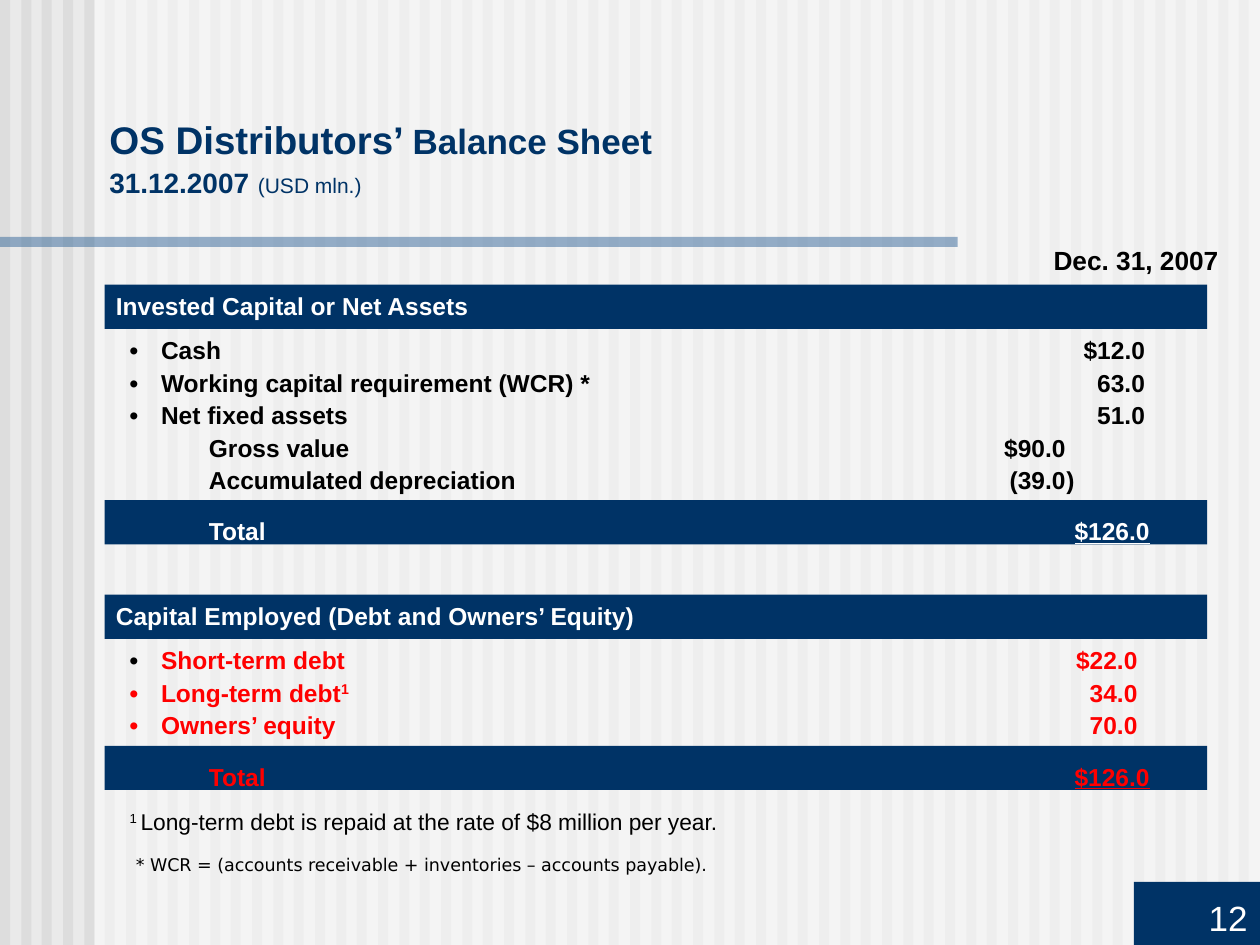
from dataclasses import dataclass

from lxml import etree
from pptx import Presentation
from pptx.dml.color import RGBColor
from pptx.enum.shapes import MSO_SHAPE as Shape
from pptx.enum.text import MSO_ANCHOR as Anchor, PP_ALIGN as Align
from pptx.oxml.ns import qn
from pptx.util import Inches, Pt

NAVY = RGBColor(0x00, 0x33, 0x66)
STEEL = RGBColor(0x33, 0x66, 0x99)
PAPER = RGBColor(0xEA, 0xEA, 0xEA)
STRIPE = RGBColor(0xDD, 0xDD, 0xDD)
WHITE = RGBColor(0xFF, 0xFF, 0xFF)
BLACK = RGBColor(0x00, 0x00, 0x00)
RED = RGBColor(0xFF, 0x00, 0x00)

BAND_LEFT, BAND_WIDTH, BAND_HEIGHT = 0.83, 8.75, 0.35
LIST_LEFT, LIST_WIDTH = 0.93, 9.07


@dataclass
class Span:
    text: str
    size: int = 14
    color: RGBColor = BLACK
    bold: bool = True
    underline: bool = False
    raised: bool = False
    font: str = "Arial"


def add_rect(page, left, top, width, height, color, opacity=100):
    box = page.shapes.add_shape(
        Shape.RECTANGLE, Inches(left), Inches(top), Inches(width), Inches(height))
    box.shadow.inherit = False
    box.fill.solid()
    box.fill.fore_color.rgb = color
    box.line.fill.background()
    if opacity < 100:
        tint = box.fill._xPr.find(".//" + qn("a:srgbClr"))
        etree.SubElement(tint, qn("a:alpha"), val=str(opacity * 1000))
    return box


def add_text_box(page, left, top, width, height, inset=True):
    box = page.shapes.add_textbox(
        Inches(left), Inches(top), Inches(width), Inches(height))
    frame = box.text_frame
    frame.word_wrap = True
    if not inset:
        frame.margin_left = frame.margin_right = 0
        frame.margin_top = frame.margin_bottom = 0
    return frame


def add_spans(para, spans):
    for span in spans:
        run = para.add_run()
        run.text = span.text
        font = run.font
        font.name, font.size = span.font, Pt(span.size)
        font.bold, font.underline = span.bold, span.underline
        font.color.rgb = span.color
        if span.raised:
            run._r.get_or_add_rPr().set("baseline", "30000")


def add_tab_stops(para, stops):
    tabs = etree.SubElement(para._p.get_or_add_pPr(), qn("a:tabLst"))
    for position, side in stops:
        etree.SubElement(tabs, qn("a:tab"), pos=str(Inches(position)), algn=side)


def add_background(page):
    page.background.fill.solid()
    page.background.fill.fore_color.rgb = PAPER
    for index in range(60):
        add_rect(page, round(index / 6, 2), 0, 0.08, 7.5, STRIPE)
    add_rect(page, 0.75, 0, 9.25, 7.5, WHITE, opacity=50)
    add_rect(page, 0, 1.88, 7.6, 0.08, STEEL, opacity=50)


def add_page_number(page, left, top, width, height, number):
    frame = add_rect(page, left, top, width, height, NAVY).text_frame
    frame.vertical_anchor = Anchor.BOTTOM
    para = frame.paragraphs[0]
    para.alignment = Align.RIGHT
    add_spans(para, [Span(number, 20, WHITE, bold=False)])


def add_title(page, left, top, width, height):
    para = add_text_box(page, left, top, width, height).paragraphs[0]
    add_spans(para, [Span("OS Distributors’ ", 22, NAVY),
                     Span("Balance Sheet", 20, NAVY), Span(" ", 24, NAVY)])
    para.add_line_break()
    add_spans(para, [Span("31.12.2007", 16, NAVY), Span(" ", 18, NAVY),
                     Span("(USD mln.)", 12, NAVY, bold=False)])


def add_section(page, top, total_top, heading, rows, last_stop, list_height):
    """Heading band, tabbed rows and total band; the last row is the total."""
    for band_top in (top, total_top):
        add_rect(page, BAND_LEFT, band_top, BAND_WIDTH, BAND_HEIGHT, NAVY)
    frame = add_text_box(page, 0.92, top + 0.05, 8.83, 0.23, inset=False)
    add_spans(frame.paragraphs[0], [Span(heading, color=WHITE)])

    frame = add_text_box(page, LIST_LEFT, top + 0.33, LIST_WIDTH, list_height)
    stops = [(0.25, "l"), (0.63, "l"), (7.43, "r"), (7.5, "r"), (last_stop, "r")]
    for index, spans in enumerate(rows):
        para = frame.paragraphs[0] if index == 0 else frame.add_paragraph()
        add_tab_stops(para, stops)
        para.line_spacing = 1.75 if index == len(rows) - 1 else 1.1
        add_spans(para, spans)


def total_row(amount, color):
    return [Span("\t\t", bold=False), Span("Total\t\t\t", color=color),
            Span(amount, color=color, underline=True)]


def add_balance_sheet(page):
    frame = add_text_box(page, 6.92, 1.94, 2.75, 0.25, inset=False)
    frame.paragraphs[0].alignment = Align.RIGHT
    add_spans(frame.paragraphs[0], [Span("Dec. 31, 2007", 15)])

    assets = [
        [Span("•\tCash\t\t\t$12.0")],
        [Span("•\tWorking capital requirement (WCR) *\t\t\t63.0")],
        [Span("•\tNet fixed assets\t\t\t51.0")],
        [Span("\t\tGross value\t$90.0")],
        [Span("\t\tAccumulated depreciation\t(39.0\t)")],
        total_row("$126.0", WHITE),
    ]
    add_section(page, 2.26, 3.97, "Invested Capital or Net Assets",
                assets, 8.06, 2.11)

    capital = [
        [Span("•\t"), Span("Short-term debt\t\t\t$22.0", color=RED)],
        [Span("•\tLong-term debt", color=RED),
         Span("1", color=RED, raised=True), Span("\t\t\t34.0", color=RED)],
        [Span("•\tOwners’ equity\t\t\t70.0", color=RED)],
        total_row("$126.0", RED),
    ]
    add_section(page, 4.72, 5.92, "Capital Employed (Debt and Owners’ Equity)",
                capital, 8, 1.6)


def add_footnotes(page):
    frame = add_text_box(page, LIST_LEFT, 6.36, 8.66, 0.32)
    add_spans(frame.paragraphs[0], [
        Span("1 ", 13, bold=False, raised=True),
        Span("Long-term debt is repaid at the rate of $8 million per year.",
             13, bold=False)])
    frame = add_text_box(page, 0.98, 6.74, 8.43, 0.24)
    frame.vertical_anchor = Anchor.MIDDLE
    add_spans(frame.paragraphs[0], [
        Span("* WCR = (accounts receivable + inventories – accounts payable).",
             10, bold=False, font="DejaVu Sans")])


def main():
    deck = Presentation()
    deck.slide_width, deck.slide_height = Inches(10), Inches(7.5)
    page = deck.slides.add_slide(deck.slide_layouts[6])
    add_background(page)
    add_page_number(page, 9, 7, 1, 0.5, "12")
    add_title(page, 0.77, 0.84, 9.23, 0.8)
    add_balance_sheet(page)
    add_footnotes(page)
    deck.save("out.pptx")


if __name__ == "__main__":
    main()
